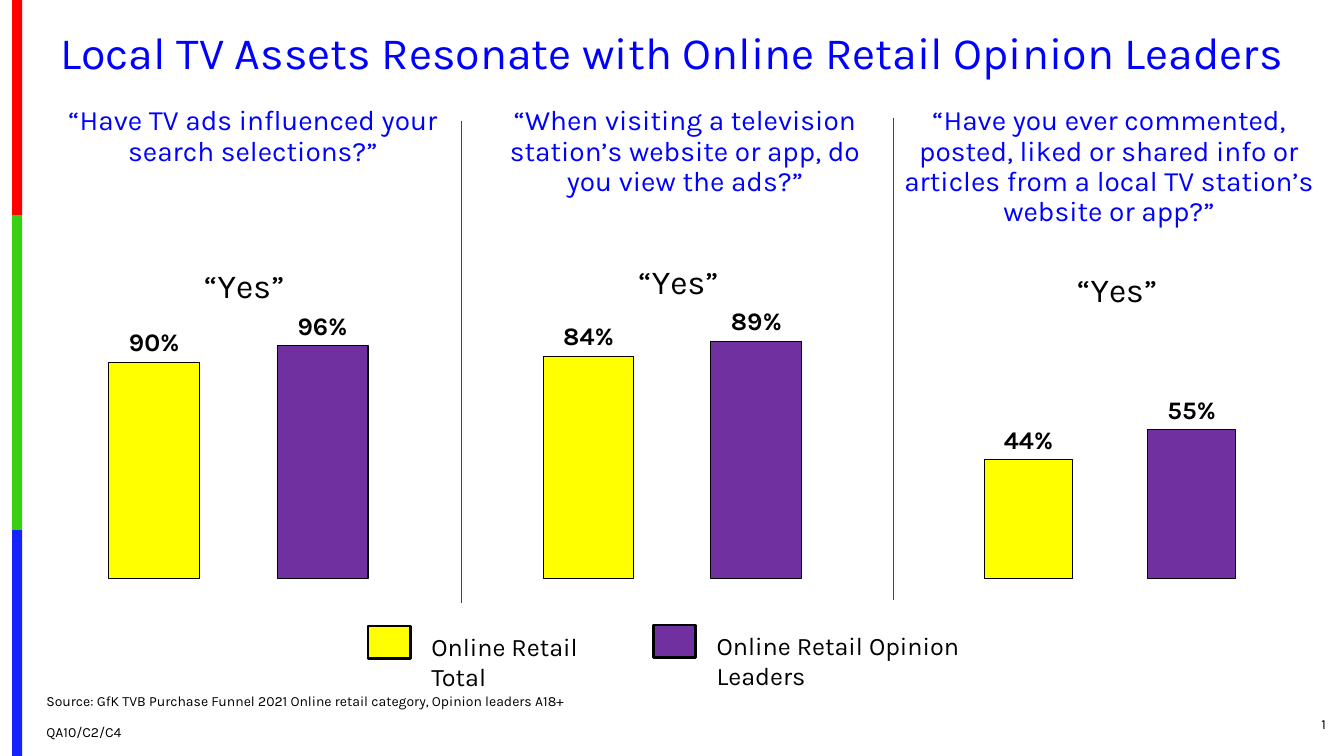
import pptx
import pptx.chart.data
import pptx.dml.color
import pptx.enum.chart
import pptx.enum.shapes
import pptx.enum.text
import pptx.oxml
import pptx.oxml.ns
import pptx.util
from lxml import etree
from pptx.util import Inches

FONT = "Karla"
BLACK, BLUE, YELLOW, PURPLE = "000000", "0000FF", "FFFF00", "7030A0"
ALIGN = pptx.enum.text.PP_ALIGN
ANCHOR = pptx.enum.text.MSO_ANCHOR

STRIPES = [("FE0000", 0, 2.14), ("36CF12", 2.14, 3.12), ("1322FE", 5.26, 2.24)]

# question, question box (left, width, height), chart (left, width),
# axis (min, max), values, top of the chart title as a share of the chart
PANELS = [
    ("“Have TV ads influenced your search selections?”",
     (0.55, 3.92, 0.71), (0.55, 3.63), (0.1, 1.1), (0.9, 0.96), 0.05),
    ("“When visiting a television station’s website or app, do you view the ads?”",
     (4.73, 4.13, 1.01), (4.86, 3.62), (0.1, 1), (0.84, 0.89), 0.04),
    ("“Have you ever commented, posted, liked or shared info or articles "
     "from a local TV station’s website or app?”",
     (8.79, 4.42, 1.31), (9.25, 3.52), (0, 1), (0.44, 0.55), 0.06),
]

LEGEND = [
    ("Online Retail Total", YELLOW, 3.65, 6.21, 2.15),
    ("Online Retail Opinion Leaders", PURPLE, 6.48, 6.2, 3.4),
]

DIVIDERS = [(4.58, 1.2), (8.86, 1.17)]


def rgb(color):
    return pptx.dml.color.RGBColor.from_string(color)


def set_font(font, size, color, bold=False):
    font.name = FONT
    font.size = pptx.util.Pt(size)
    font.bold = bold
    font.color.rgb = rgb(color)


def place(sp, left, top, width, height):
    sp.left, sp.top = Inches(left), Inches(top)
    sp.width, sp.height = Inches(width), Inches(height)


def write(sp, text, size, color, align=ALIGN.LEFT, anchor=ANCHOR.TOP, spacing=1.0):
    tf = sp.text_frame
    tf.text = text
    tf.word_wrap = True
    tf.auto_size = pptx.enum.text.MSO_AUTO_SIZE.NONE
    tf.vertical_anchor = anchor
    for p in tf.paragraphs:
        p.alignment = align
        p.line_spacing = spacing
        for r in p.runs:
            set_font(r.font, size, color)


def add_text(s, box, text, size, color, **layout):
    sp = s.shapes.add_textbox(*map(Inches, box))
    write(sp, text, size, color, **layout)
    return sp


def add_rect(s, box, fill, line_width=0):
    sp = s.shapes.add_shape(pptx.enum.shapes.MSO_SHAPE.RECTANGLE, *map(Inches, box))
    sp.shadow.inherit = False
    sp.fill.solid()
    sp.fill.fore_color.rgb = rgb(fill)
    if line_width:
        sp.line.color.rgb = rgb(BLACK)
        sp.line.width = pptx.util.Pt(line_width)
    else:
        sp.line.fill.background()


def add_divider(s, x, top):
    line = s.shapes.add_connector(
        pptx.enum.shapes.MSO_CONNECTOR.STRAIGHT,
        Inches(x), Inches(top), Inches(x), Inches(top + 4.78))
    line.line.color.rgb = rgb("2D2DFE")
    line.line.width = pptx.util.Pt(0.75)
    etree.SubElement(line._element.spPr, pptx.oxml.ns.qn("a:effectLst"))


def manual_layout(inner="", **shares):
    """Return a c:layout element with the given shares of the chart area."""
    target = f'<c:layoutTarget val="{inner}"/>' if inner else ""
    modes = "".join(f'<c:{k}Mode val="edge"/>' for k in shares if k in "xy")
    sizes = "".join(f'<c:{k} val="{v}"/>' for k, v in shares.items())
    return pptx.oxml.parse_xml(
        f'<c:layout {pptx.oxml.ns.nsdecls("c")}><c:manualLayout>'
        f"{target}{modes}{sizes}</c:manualLayout></c:layout>")


def set_layout(parent, layout, index):
    for old in parent.findall(pptx.oxml.ns.qn("c:layout")):
        parent.remove(old)
    parent.insert(index, layout)


def add_bar_chart(s, left, width, axis_range, values, title_top):
    data = pptx.chart.data.CategoryChartData(number_format="0%")
    data.categories = ["1", "2"]
    data.add_series("Series 1", values)
    chart = s.shapes.add_chart(
        pptx.enum.chart.XL_CHART_TYPE.COLUMN_CLUSTERED,
        Inches(left), Inches(2.38), Inches(width), Inches(3.57), data).chart
    set_font(chart.font, 10, BLACK)
    chart.has_legend = False

    chart.has_title = True
    chart.chart_title.text_frame.text = "“Yes”"
    set_font(chart.chart_title.text_frame.paragraphs[0].runs[0].font, 24, BLACK)
    set_layout(chart.chart_title._element, manual_layout(x=0.39, y=title_top), 1)
    set_layout(chart._chartSpace.chart.plotArea,
               manual_layout("inner", x=0.04, y=0.19, w=0.92, h=0.75), 0)

    chart.category_axis.visible = False
    axis = chart.value_axis
    axis.visible = False
    axis.has_major_gridlines = False
    axis.minimum_scale, axis.maximum_scale = axis_range

    plot = chart.plots[0]
    plot.gap_width = 85
    plot.vary_by_categories = False
    series = plot.series[0]
    for i, color in enumerate((YELLOW, PURPLE)):
        bar = series.points[i].format
        bar.fill.solid()
        bar.fill.fore_color.rgb = rgb(color)
        bar.line.color.rgb = rgb(BLACK)
        bar.line.width = pptx.util.Pt(0.75)
    labels = series.data_labels
    labels.show_value = True
    labels.number_format = "0%"
    labels.number_format_is_linked = False
    labels.position = pptx.enum.chart.XL_LABEL_POSITION.OUTSIDE_END
    set_font(labels.font, 18, BLACK, bold=True)


def add_source(sp):
    place(sp, 0.36, 6.85, 10.78, 0.54)
    write(sp, "Source: GfK TVB Purchase Funnel 2021 Online retail category, "
              "Opinion leaders A18+\nQA10/C2/C4", 10, BLACK, anchor=ANCHOR.BOTTOM)
    for i, p in enumerate(sp.text_frame.paragraphs):
        p.space_before = pptx.util.Pt(10 if i else 0)
        pPr = p._p.get_or_add_pPr()
        pPr.set("marL", "0")
        pPr.set("indent", "0")
        etree.SubElement(pPr, pptx.oxml.ns.qn("a:buNone"))


def add_slide_number(s):
    sp = add_text(s, (12.17, 6.98, 1.08, 0.4), "24", 10, BLACK,
                  align=ALIGN.RIGHT, anchor=ANCHOR.MIDDLE)
    r = sp.text_frame.paragraphs[0].runs[0]._r
    r.tag = pptx.oxml.ns.qn("a:fld")
    r.set("id", "{B6F15528-21DE-4FAA-801E-634DDDAF4B2B}")
    r.set("type", "slidenum")


def main():
    prs = pptx.Presentation()
    prs.slide_width, prs.slide_height = Inches(13.33), Inches(7.5)
    s = prs.slides.add_slide(prs.slide_layouts[1])

    for color, top, height in STRIPES:
        add_rect(s, (0.12, top, 0.1, height), color)

    place(s.shapes.title, 0.46, 0.25, 12.42, 0.59)
    write(s.shapes.title, "Local TV Assets Resonate with Online Retail Opinion Leaders",
          32, BLUE, align=ALIGN.CENTER, anchor=ANCHOR.MIDDLE, spacing=0.9)
    add_source(s.placeholders[1])
    add_slide_number(s)

    for question, (left, width, height), chart_span, axis_range, values, title_top in PANELS:
        add_bar_chart(s, *chart_span, axis_range, values, title_top)
        add_text(s, (left, 1.01, width, height), question, 20, BLUE,
                 align=ALIGN.CENTER, spacing=0.9)
    for label, color, left, top, width in LEGEND:
        add_rect(s, (left, top, 0.42, 0.32), color, line_width=2)
        add_text(s, (left + 0.53, top, width, 0.4), label, 18, BLACK)
    for x, top in DIVIDERS:
        add_divider(s, x, top)

    prs.save("out.pptx")


if __name__ == "__main__":
    main()
